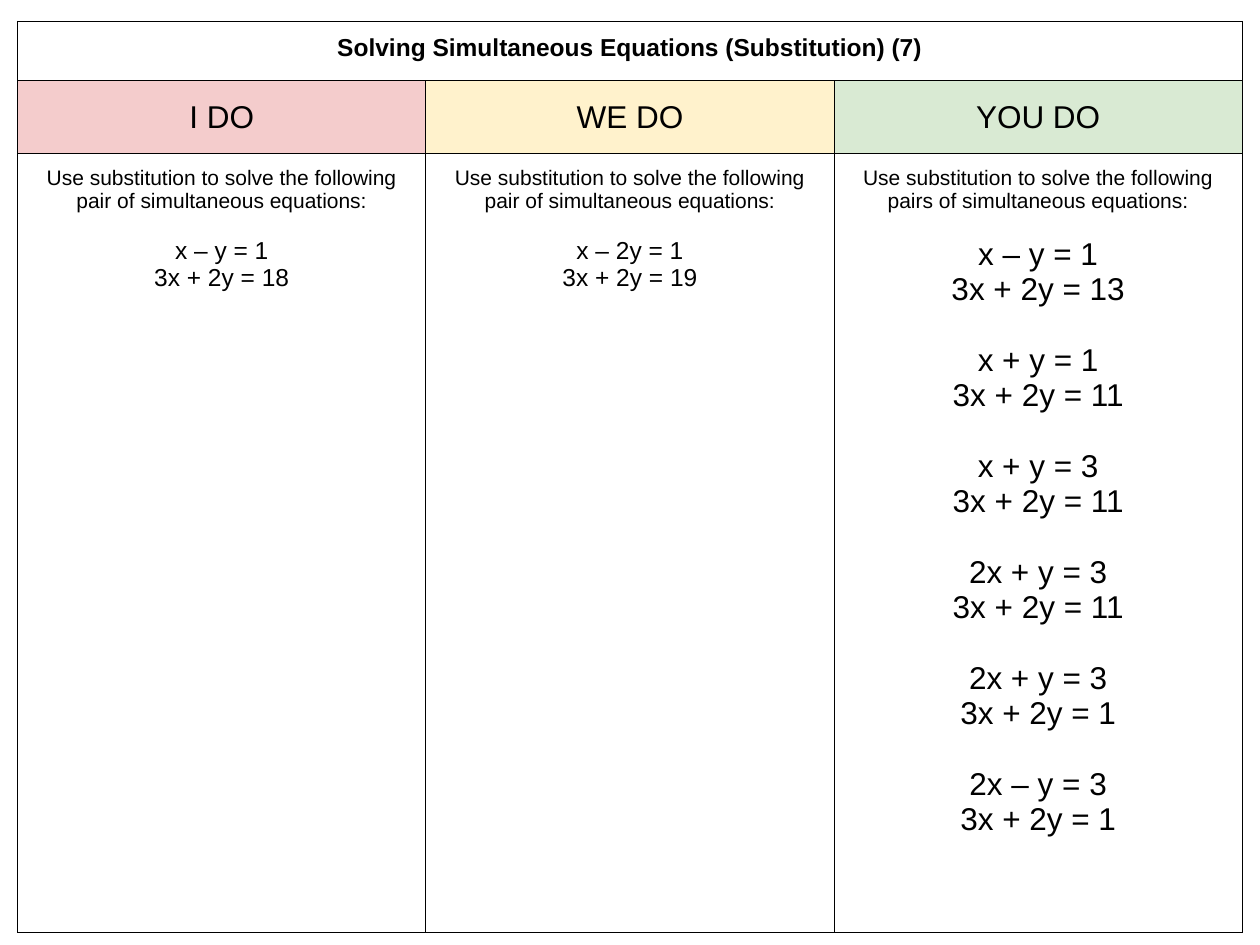
from dataclasses import dataclass

from lxml import etree
from pptx import Presentation
from pptx.dml.color import RGBColor
from pptx.enum import text
from pptx.oxml import ns
from pptx.util import Inches, Pt

BLACK = RGBColor(0x00, 0x00, 0x00)
PINK = RGBColor(0xF4, 0xCC, 0xCC)
CREAM = RGBColor(0xFF, 0xF2, 0xCC)
GREEN = RGBColor(0xD9, 0xEA, 0xD3)

FONT = "Arial"
BORDER = Pt(0.75)
MARGIN = Inches(0.1)
COLUMN_WIDTH = Inches(3.24)
ROW_HEIGHTS = [Inches(0.47), Inches(0.58), Inches(6.18)]
PROMPT_GAP = 13.5
PAIR_GAP = 20.2


@dataclass
class Column:
    heading: str
    color: RGBColor
    noun: str
    size: int
    pairs: list[tuple[str, str]]


COLUMNS = [
    Column("I DO", PINK, "pair", 14, [("x – y = 1", "3x + 2y = 18")]),
    Column("WE DO", CREAM, "pair", 14, [("x – 2y = 1", "3x + 2y = 19")]),
    Column("YOU DO", GREEN, "pairs", 18, [
        ("x – y = 1", "3x + 2y = 13"),
        ("x + y = 1", "3x + 2y = 11"),
        ("x + y = 3", "3x + 2y = 11"),
        ("2x + y = 3", "3x + 2y = 11"),
        ("2x + y = 3", "3x + 2y = 1"),
        ("2x – y = 3", "3x + 2y = 1"),
    ]),
]


def add_border(cell) -> None:
    tc_pr = cell._tc.get_or_add_tcPr()
    for side in ("lnL", "lnR", "lnT", "lnB"):
        line = etree.SubElement(tc_pr, ns.qn(f"a:{side}"), w=str(BORDER))
        fill = etree.SubElement(line, ns.qn("a:solidFill"))
        etree.SubElement(fill, ns.qn("a:srgbClr"), val=str(BLACK))


def format_cell(cell) -> None:
    cell.margin_left = cell.margin_right = MARGIN
    cell.margin_top = cell.margin_bottom = MARGIN
    cell.vertical_anchor = text.MSO_ANCHOR.TOP
    add_border(cell)
    cell.fill.background()


def write_line(p, words: str, size: int, bold: bool = False, gap: float = 0) -> None:
    p.alignment = text.PP_ALIGN.CENTER
    p.space_before = Pt(gap)
    r = p.add_run()
    r.text = words
    r.font.name = FONT
    r.font.size = Pt(size)
    r.font.bold = bold
    r.font.color.rgb = BLACK


def write_heading(cell, column: Column) -> None:
    cell.vertical_anchor = text.MSO_ANCHOR.MIDDLE
    cell.fill.solid()
    cell.fill.fore_color.rgb = column.color
    write_line(cell.text_frame.paragraphs[0], column.heading, 18)


def write_exercises(cell, column: Column) -> None:
    tf = cell.text_frame
    prompt = f"Use substitution to solve the following {column.noun} of simultaneous equations:"
    write_line(tf.paragraphs[0], prompt, 12)
    for i, (first, second) in enumerate(column.pairs):
        write_line(tf.add_paragraph(), first, column.size, gap=PAIR_GAP if i else PROMPT_GAP)
        write_line(tf.add_paragraph(), second, column.size)


def main() -> None:
    prs = Presentation()
    prs.slide_width, prs.slide_height = Inches(10), Inches(7.5)
    s = prs.slides.add_slide(prs.slide_layouts[6])

    table = s.shapes.add_table(
        len(ROW_HEIGHTS), len(COLUMNS), Inches(0.14), Inches(0.17),
        COLUMN_WIDTH * len(COLUMNS), sum(ROW_HEIGHTS),
    ).table
    table.first_row = table.horz_banding = False
    for row, height in zip(table.rows, ROW_HEIGHTS):
        row.height = height
    for table_column in table.columns:
        table_column.width = COLUMN_WIDTH
    for cell in table.iter_cells():
        format_cell(cell)

    title = table.cell(0, 0)
    title.merge(table.cell(0, len(COLUMNS) - 1))
    write_line(title.text_frame.paragraphs[0],
               "Solving Simultaneous Equations (Substitution) (7)", 14, bold=True)
    for i, column in enumerate(COLUMNS):
        write_heading(table.cell(1, i), column)
        write_exercises(table.cell(2, i), column)

    prs.save("out.pptx")


if __name__ == "__main__":
    main()
